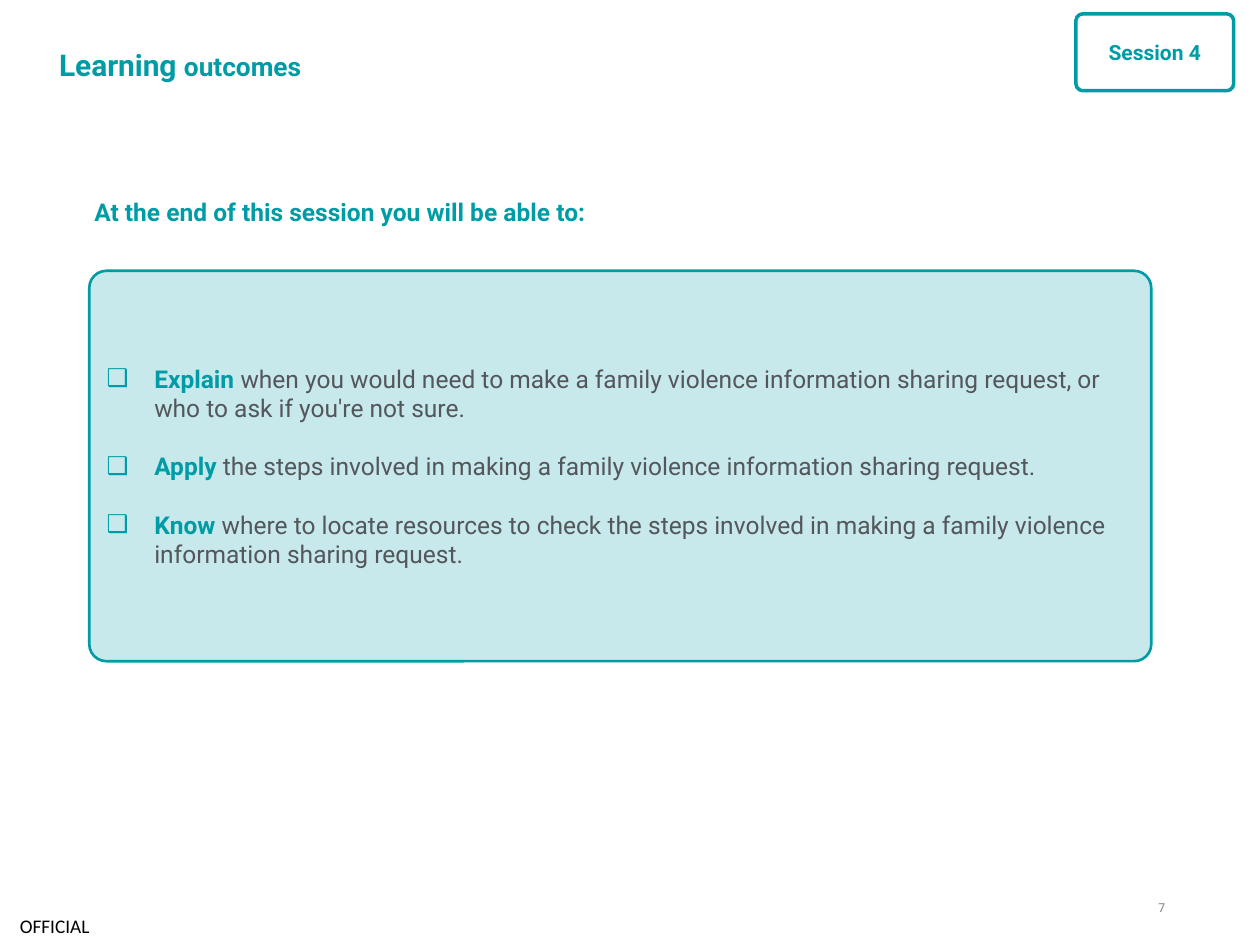
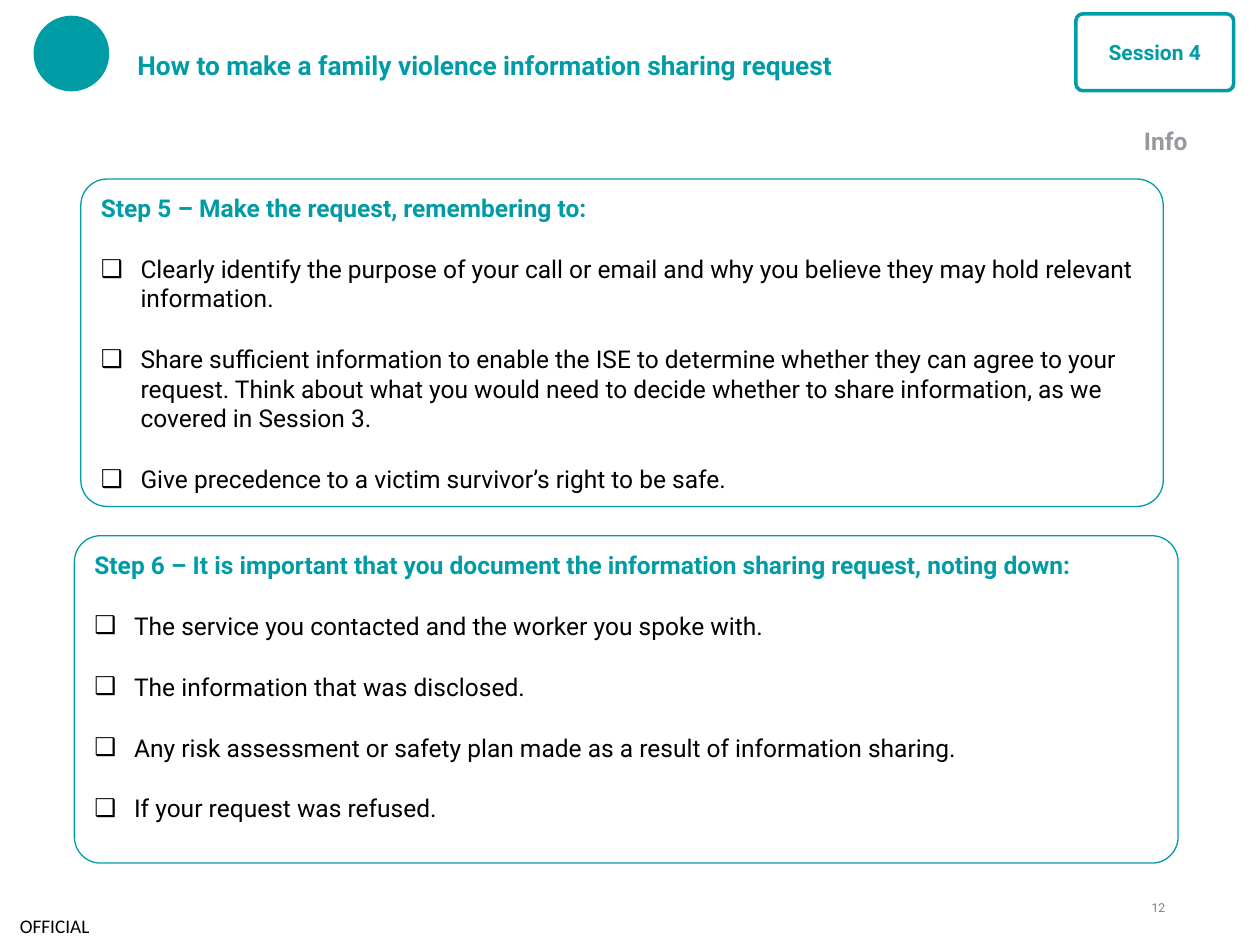
import pptx
import pptx.dml.color
import pptx.enum.shapes
import pptx.enum.text
import pptx.oxml.ns
import pptx.util
from lxml import etree

Cm, Pt = pptx.util.Cm, pptx.util.Pt
RGBColor = pptx.dml.color.RGBColor
SHAPE = pptx.enum.shapes.MSO_SHAPE
ANCHOR = pptx.enum.text.MSO_ANCHOR
ALIGN = pptx.enum.text.PP_ALIGN
qn = pptx.oxml.ns.qn

TEAL = RGBColor(0x00, 0x9C, 0xA6)
WHITE = RGBColor(0xFF, 0xFF, 0xFF)
BLACK = RGBColor(0x00, 0x00, 0x00)
SLATE = RGBColor(0x53, 0x56, 0x5A)
SILVER = RGBColor(0x96, 0x99, 0x9E)
GREY = RGBColor(0x7F, 0x7F, 0x7F)

FONT = "Roboto"
BODY_SIZE = 14
TITLE_SIZE = 15
TITLE_RIGHT = 20.19
CORNER_INSET = 0.29

OUTCOMES = [
    ("Explain ", "when you would need to make a family violence information sharing "
                 "request, or who to ask if you're not sure."),
    ("Apply", " the steps involved in making a family violence information sharing request."),
    ("Know ", "where to locate resources to check the steps involved in making a family "
              "violence information sharing request."),
]
STEP_5 = ("Step 5 – Make the request, remembering to:", [
    "Clearly identify the purpose of your call or email and why you believe they may hold "
    "relevant information.",
    "Share sufficient information to enable the ISE to determine whether they can agree to "
    "your request. Think about what you would need to decide whether to share information, "
    "as we covered in Session 3.",
    "Give precedence to a victim survivor’s right to be safe.",
])
STEP_6 = ("Step 6 – It is important that you document the information sharing request, "
          "noting down:", [
    "The service you contacted and the worker you spoke with.",
    "The information that was disclosed.",
    "Any risk assessment or safety plan made as a result of information sharing.",
    "If your request was refused.",
])


def add_run(p, text, size, color, bold=False, font=FONT):
    r = p.add_run()
    r.text = text
    r.font.name = font
    r.font.size = Pt(size)
    r.font.bold = bold
    r.font.color.rgb = color


def set_margins(tf, left=0, top=0, right=0, bottom=0):
    tf.margin_left, tf.margin_top = Cm(left), Cm(top)
    tf.margin_right, tf.margin_bottom = Cm(right), Cm(bottom)


def place(sp, box):
    sp.left, sp.top, sp.width, sp.height = map(Cm, box)


def add_label(s, box, text, size, color, align=ALIGN.LEFT, bold=False, font=FONT):
    tf = s.shapes.add_textbox(*map(Cm, box)).text_frame
    tf.word_wrap = True
    set_margins(tf)
    p = tf.paragraphs[0]
    p.alignment = align
    add_run(p, text, size, color, bold, font)
    return tf


def add_shape(s, kind, box, fill, line_width, radius=None):
    sp = s.shapes.add_shape(kind, *map(Cm, box))
    sp.shadow.inherit = False
    if fill is None:
        sp.fill.background()
    else:
        sp.fill.solid()
        sp.fill.fore_color.rgb = fill
    sp.line.color.rgb = TEAL
    sp.line.width = Pt(line_width)
    if radius is not None:
        sp.adjustments[0] = radius
    return sp


def set_bullet(p, indent, color=None):
    pPr = p._p.get_or_add_pPr()
    pPr.set("marL", str(Cm(indent)))
    pPr.set("indent", str(-Cm(indent)))
    if color is None:
        etree.SubElement(pPr, qn("a:buNone"))
        return
    clr = etree.SubElement(pPr, qn("a:buClr"))
    etree.SubElement(clr, qn("a:srgbClr"), val=str(color))
    etree.SubElement(pPr, qn("a:buChar"), char="❑")


def fill_list(body, paragraphs, gap):
    tf = body.text_frame
    for i, (runs, indent, bullet_color) in enumerate(paragraphs):
        p = tf.add_paragraph() if i else tf.paragraphs[0]
        set_bullet(p, indent, bullet_color)
        p.space_before = Pt(gap if i else 0)
        p.space_after = Pt(0)
        for text, color, bold in runs:
            add_run(p, text, BODY_SIZE, color, bold)


def add_panel(s, body, box, radius, fill, line_width, anchor):
    left, top, width, height = box
    panel = add_shape(s, SHAPE.ROUNDED_RECTANGLE, box, fill, line_width, radius)
    panel._element.addnext(body._element)
    pad = CORNER_INSET * radius * height
    place(body, (left + pad, top + pad, width - 2 * pad, height - 2 * pad))
    tf = body.text_frame
    tf.auto_size = pptx.enum.text.MSO_AUTO_SIZE.NONE
    tf.word_wrap = True
    tf.vertical_anchor = anchor
    set_margins(tf, 0.25, 0.13, 0.25, 0.13)
    return panel


def add_title(s, left, runs):
    title = s.shapes.title
    place(title, (left, 0.48, TITLE_RIGHT - left, 1.65))
    tf = title.text_frame
    tf.auto_size = pptx.enum.text.MSO_AUTO_SIZE.NONE
    tf.vertical_anchor = ANCHOR.MIDDLE
    set_margins(tf)
    p = tf.paragraphs[0]
    p.alignment = ALIGN.LEFT
    for text, size in runs:
        add_run(p, text, size, TEAL, True)


def add_session_badge(s):
    badge = add_shape(s, SHAPE.ROUNDED_RECTANGLE, (21.69, 0.28, 3.18, 1.55), WHITE, 2, 0.09)
    tf = badge.text_frame
    tf.vertical_anchor = ANCHOR.MIDDLE
    p = tf.paragraphs[0]
    p.alignment = ALIGN.CENTER
    add_run(p, "Session 4", 12, TEAL, True)


def add_footer(s, number):
    tf = add_label(s, (0, 18.26, 2.21, 0.79), "OFFICIAL", 11, BLACK, font="Calibri")
    tf.margin_left = Cm(0.4)
    tf.vertical_anchor = ANCHOR.MIDDLE
    add_label(s, (22.63, 18.14, 0.86, 0.51), str(number), 7, GREY, ALIGN.RIGHT)


def add_lead_in(s, box, text):
    table = s.shapes.add_table(1, 1, *map(Cm, box)).table
    table.first_row = table.horz_banding = False
    cell = table.cell(0, 0)
    cell.fill.solid()
    cell.fill.fore_color.rgb = WHITE
    set_margins(cell, 0.1, 0.1, 0.1, 0.1)
    add_run(cell.text_frame.paragraphs[0], text, BODY_SIZE, TEAL, True)


def add_outcomes(s, box):
    body = s.placeholders[1]
    panel = add_panel(s, body, box, 0.044, TEAL, 1.5, ANCHOR.MIDDLE)
    tint = panel._element.spPr.find(qn("a:solidFill")).find(qn("a:srgbClr"))
    etree.SubElement(tint, qn("a:alpha"), val="22000")
    fill_list(body, [([(verb, TEAL, True), (rest, SLATE, False)], 0.96, TEAL)
                     for verb, rest in OUTCOMES], 16.5)


def add_step(s, body, box, step):
    heading, items = step
    add_panel(s, body, box, 0.08, None, 0.75, ANCHOR.TOP)
    fill_list(body, [([(heading, TEAL, True)], 0, None)]
              + [([(item, BLACK, False)], 0.8, BLACK) for item in items], 18)


def build_outcomes_slide(prs):
    s = prs.slides.add_slide(prs.slide_layouts[1])
    add_title(s, 1.19, [("Learning ", 17.1), ("outcomes", TITLE_SIZE)])
    add_lead_in(s, (1.8, 3.91, 21.97, 1.55), "At the end of this session you will be able to:")
    add_outcomes(s, (1.8, 5.46, 21.41, 7.87))
    add_session_badge(s)
    add_footer(s, 7)


def build_steps_slide(prs):
    s = prs.slides.add_slide(prs.slide_layouts[3])
    add_shape(s, SHAPE.OVAL, (0.69, 0.33, 1.5, 1.5), TEAL, 0.75)
    add_title(s, 2.77, [("How to make a family violence information sharing request",
                         TITLE_SIZE)])
    add_label(s, (23.06, 2.54, 2, 0.6), "Info", BODY_SIZE, SILVER, bold=True)
    add_step(s, s.placeholders[1], (1.63, 3.61, 21.82, 6.6), STEP_5)
    add_step(s, s.placeholders[2], (1.5, 10.8, 22.25, 6.6), STEP_6)
    add_session_badge(s)
    add_footer(s, 12)


def main():
    prs = pptx.Presentation()
    prs.slide_width, prs.slide_height = Cm(25.4), Cm(19.05)
    build_outcomes_slide(prs)
    build_steps_slide(prs)
    prs.save("out.pptx")


if __name__ == "__main__":
    main()
